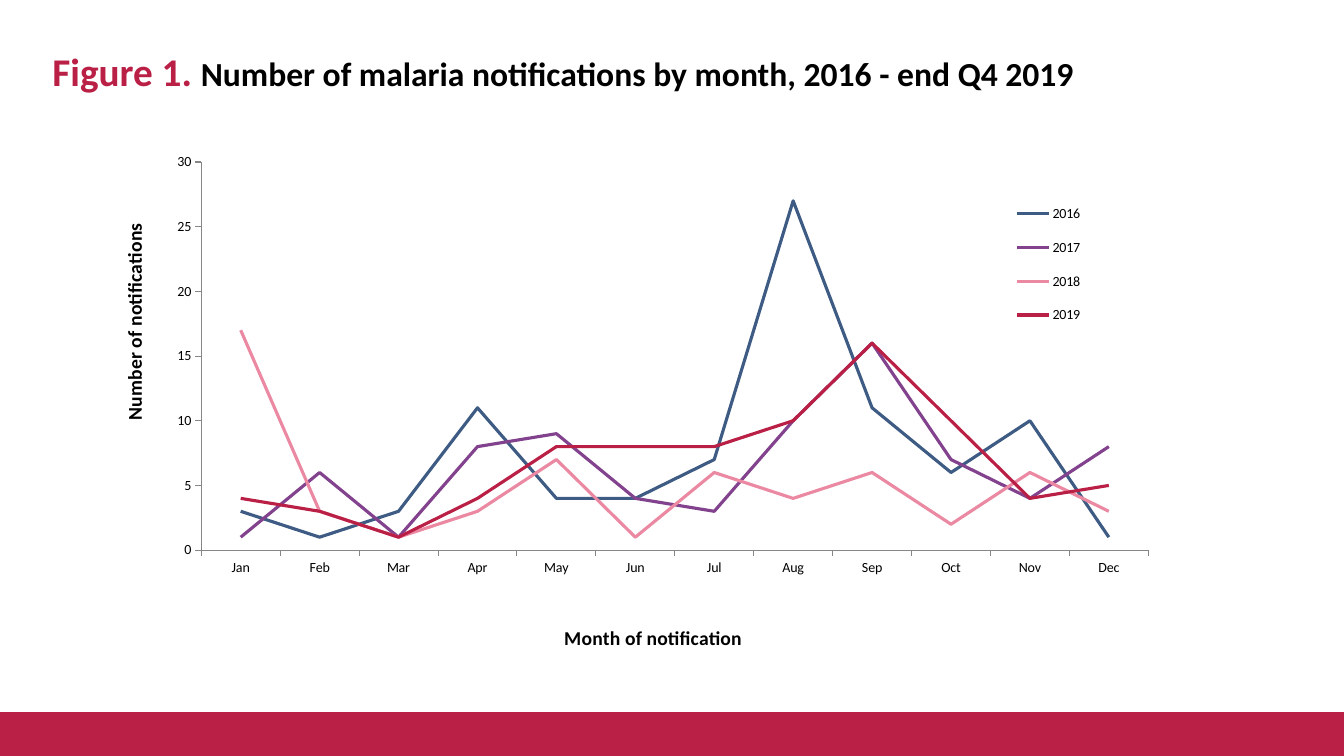
"""Build a slide with a line chart of malaria notifications by month."""
from dataclasses import dataclass
from typing import Any

from lxml.etree import SubElement
from pptx import Presentation
from pptx.chart.data import CategoryChartData as Data
from pptx.dml.color import RGBColor as Color
from pptx.enum.chart import XL_CHART_TYPE as Kind, XL_LEGEND_POSITION as Side, XL_TICK_MARK as Tick
from pptx.enum.shapes import MSO_SHAPE as Form
from pptx.enum.text import MSO_ANCHOR as Anchor, MSO_AUTO_SIZE as Fit, PP_ALIGN as Align
from pptx.oxml import parse_xml
from pptx.oxml.ns import nsdecls, qn
from pptx.util import Inches, Pt


@dataclass(frozen=True)
class Theme:
    face: str = "Calibri"
    red: str = "BA1F46"
    ink: str = "000000"
    gray: str = "868686"
    label: float = 28
    head: float = 24
    axis: float = 14
    small: float = 10
    stroke: float = 2.25


@dataclass(frozen=True)
class Year:
    name: str
    color: str
    counts: tuple[int, ...]


@dataclass(frozen=True)
class Scale:
    axis: Any
    title: str
    place: dict[str, float]
    turn: int
    format: dict[str, Any]


THEME = Theme()
MONTHS = "Jan Feb Mar Apr May Jun Jul Aug Sep Oct Nov Dec".split()
YEARS = (
    Year("2016", "3E5B84", (3, 1, 3, 11, 4, 4, 7, 27, 11, 6, 10, 1)),
    Year("2017", "82428D", (1, 6, 1, 8, 9, 4, 3, 10, 16, 7, 4, 8)),
    Year("2018", "EB89A3", (17, 3, 1, 3, 7, 1, 6, 4, 6, 2, 6, 3)),
    Year("2019", THEME.red, (4, 3, 1, 4, 8, 8, 8, 10, 16, 10, 4, 5)),
)


def apply(item: Any, values: dict[str, Any]) -> None:
    for key, value in values.items():
        setattr(item, key, value)


def style(font: Any, size: float, color: str, bold: bool = True) -> None:
    apply(font, {"name": THEME.face, "size": Pt(size), "bold": bold})
    font.color.rgb = Color.from_string(color)


def ink(line: Any, color: str, width: float) -> None:
    line.color.rgb = Color.from_string(color)
    line.width = Pt(width)


def place(node: Any, spots: dict[str, float], inner: bool = False) -> None:
    for old in node.findall(qn("c:layout")):
        node.remove(old)
    layout = parse_xml(f"<c:layout {nsdecls('c')}><c:manualLayout/></c:layout>")
    rules = {"layoutTarget": "inner"} if inner else {}
    rules |= {f"{key}Mode": "edge" for key in "xy"} | spots
    for key, value in rules.items():
        SubElement(layout[0], qn(f"c:{key}")).set("val", str(value))
    first = sum(child.tag in (qn("c:tx"), qn("c:legendPos")) for child in node)
    node.insert(first, layout)


def add_bar(slide: Any) -> None:
    bar = slide.shapes.add_shape(Form.RECTANGLE, 0, Inches(7.08), Inches(13.33), Inches(0.42))
    bar.shadow.inherit = False
    bar.fill.solid()
    bar.fill.fore_color.rgb = Color.from_string(THEME.red)
    ink(bar.line, THEME.red, 2)


def add_title(slide: Any) -> None:
    title = slide.shapes.title
    apply(title, {"left": Inches(0.42), "top": Inches(0.42),
                  "width": Inches(11), "height": Inches(0.93)})
    frame = title.text_frame
    apply(frame, {"word_wrap": True, "auto_size": Fit.NONE, "vertical_anchor": Anchor.TOP})
    line = frame.paragraphs[0]
    line.alignment = Align.LEFT
    for text, size, color in (
        ("Figure 1. ", THEME.label, THEME.red),
        ("Number of malaria notifications by month, 2016 - end Q4 2019", THEME.head, THEME.ink),
    ):
        run = line.add_run()
        run.text = text
        style(run.font, size, color)


def set_scale(scale: Scale) -> None:
    axis = scale.axis
    apply(axis, {"has_major_gridlines": False, "major_tick_mark": Tick.OUTSIDE,
                 "minor_tick_mark": Tick.NONE} | scale.format)
    ink(axis.format.line, THEME.gray, 0.75)
    style(axis.tick_labels.font, THEME.small, THEME.ink, False)
    title = axis.axis_title
    frame = title.text_frame
    frame.text = scale.title
    style(frame.paragraphs[0].runs[0].font, THEME.axis, THEME.ink)
    body = next(title._element.iter(qn("a:bodyPr")))
    body.set("rot", str(scale.turn * 60000))
    body.set("vert", "horz")
    place(title._element, scale.place)


def add_graph(slide: Any) -> None:
    data = Data()
    data.categories = MONTHS
    for year in YEARS:
        data.add_series(year.name, year.counts)
    box = (Inches(n) for n in (0.83, 1.34, 11, 5.24))
    chart = slide.shapes.add_chart(Kind.LINE, *box, data).chart
    apply(chart, {"has_title": False, "has_legend": True})
    style(chart.font, THEME.small, THEME.ink, False)
    plot = chart.plots[0]
    plot.vary_by_categories = False
    for year, series in zip(YEARS, plot.series):
        series.smooth = False
        ink(series.format.line, year.color, THEME.stroke)
    for scale in (
        Scale(chart.category_axis, "Month of notification", {"x": 0.43, "y": 0.92}, 0, {}),
        Scale(chart.value_axis, "Number of notifications", {"x": 0.03, "y": 0.16}, -90,
              {"minimum_scale": 0, "maximum_scale": 30, "major_unit": 5}),
    ):
        set_scale(scale)
    legend = chart.legend
    apply(legend, {"position": Side.RIGHT, "include_in_layout": False})
    style(legend.font, THEME.small, THEME.ink, False)
    place(legend._element, {"x": 0.83, "y": 0.1, "w": 0.08, "h": 0.29})
    area = chart._chartSpace.chart.plotArea
    place(area, {"x": 0.106, "y": 0.051, "w": 0.854, "h": 0.735}, True)


def main() -> None:
    deck = Presentation()
    apply(deck, {"slide_width": Inches(13.33), "slide_height": Inches(7.5)})
    slide = deck.slides.add_slide(deck.slide_layouts[5])
    add_bar(slide)
    add_title(slide)
    add_graph(slide)
    deck.save("out.pptx")


if __name__ == "__main__":
    main()
